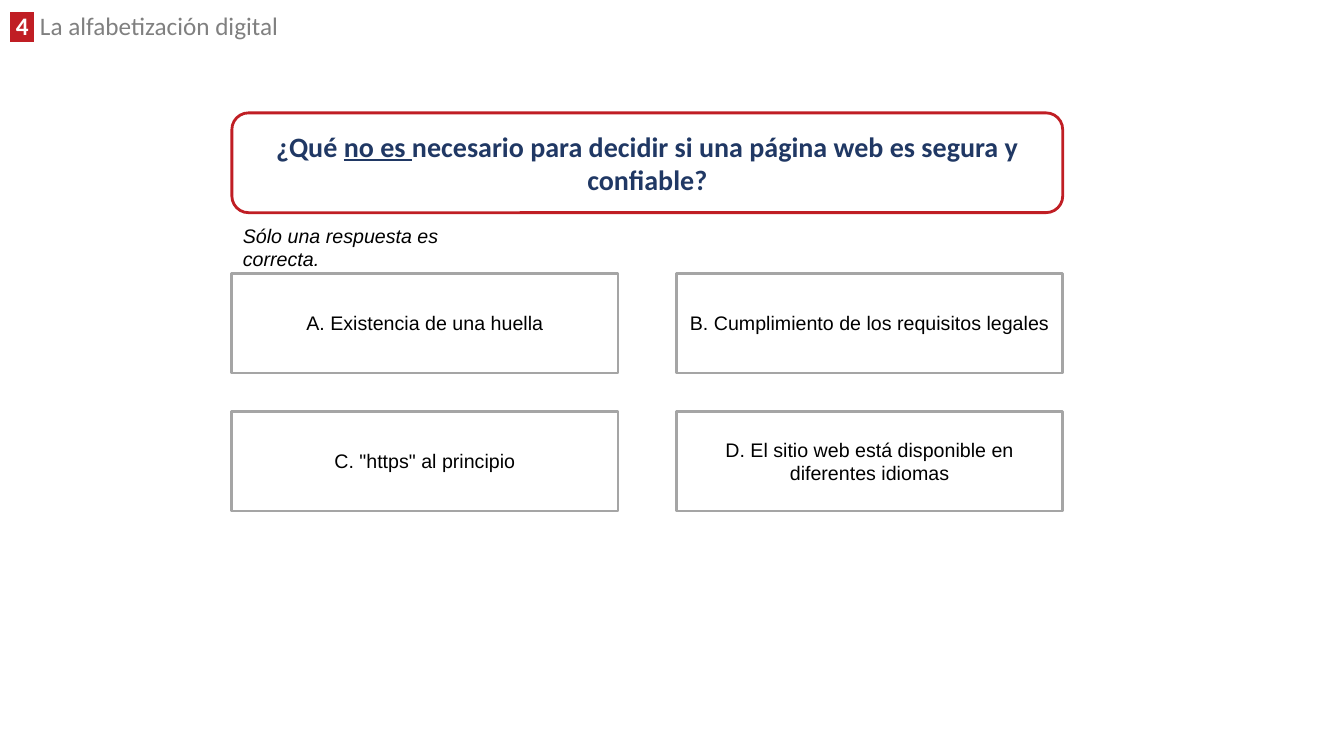
import lxml.etree
import pptx
import pptx.dml.color
import pptx.enum.shapes
import pptx.enum.text
import pptx.oxml.ns
import pptx.util

SHAPE = pptx.enum.shapes.MSO_SHAPE
ALIGN = pptx.enum.text.PP_ALIGN
ANCHOR = pptx.enum.text.MSO_ANCHOR
RED = "C01E24"


def paint(code):
    return pptx.dml.color.RGBColor.from_string(code)


def write(para, words, font="Arial", size=14, color="000000", bold=False,
          slant=False, under=False, mark=None):
    run = para.add_run()
    run.text = words
    style = run.font
    style.size = pptx.util.Pt(size)
    style.bold, style.italic, style.underline = bold, slant, under
    style.color.rgb = paint(color)
    if mark:
        light = lxml.etree.SubElement(run._r.get_or_add_rPr(), pptx.oxml.ns.qn("a:highlight"))
        lxml.etree.SubElement(light, pptx.oxml.ns.qn("a:srgbClr"), val=mark)
    style.name = font


class Quiz:
    """Draw quiz parts on one slide, placed in percent of its size."""

    def __init__(self, wide=13.33, high=7.5):
        self.deck = pptx.Presentation()
        self.deck.slide_width = pptx.util.Inches(wide)
        self.deck.slide_height = pptx.util.Inches(high)
        self.slide = self.deck.slides.add_slide(self.deck.slide_layouts[5])

    def area(self, left, top, width, height):
        wide, high = self.deck.slide_width, self.deck.slide_height
        shares = (left * wide, top * high, width * wide, height * high)
        return [round(share / 100) for share in shares]

    def frame(self, shape, anchor, align):
        body = shape.text_frame
        body.word_wrap = True
        body.auto_size = pptx.enum.text.MSO_AUTO_SIZE.NONE
        body.vertical_anchor = anchor
        para = body.paragraphs[0]
        para.alignment = align
        return para

    def title(self, spot, number, words):
        head = self.slide.shapes.title
        head.left, head.top, head.width, head.height = self.area(*spot)
        para = self.frame(head, ANCHOR.TOP, ALIGN.LEFT)
        para.line_spacing = 0.8
        para.space_before = pptx.util.Pt(0)
        write(para, f" {number} ", font="Calibri", size=18, color="FFFFFF", bold=True, mark=RED)
        write(para, " ", font="Calibri", size=18, color="7F7F7F")
        write(para, words, font="Calibri", size=18, color="808080")

    def box(self, spot, parts, kind=SHAPE.RECTANGLE, edge="A5A5A5", **form):
        shape = self.slide.shapes.add_shape(kind, *self.area(*spot))
        shape.shadow.inherit = False
        shape.fill.solid()
        shape.fill.fore_color.rgb = paint("FFFFFF")
        shape.line.color.rgb = paint(edge)
        shape.line.width = pptx.util.Pt(2)
        para = self.frame(shape, ANCHOR.MIDDLE, ALIGN.CENTER)
        for words, under in parts:
            write(para, words, under=under, **form)

    def note(self, spot, words, **form):
        shape = self.slide.shapes.add_textbox(*self.area(*spot))
        write(self.frame(shape, ANCHOR.TOP, ALIGN.LEFT), words, **form)

    def save(self):
        self.deck.save("out.pptx")


def main():
    quiz = Quiz()
    quiz.title((0, 1.47, 42.84, 4.53), 4, "La alfabetización digital")
    left, top, width, height = 17.25, 36.13, 28.73, 13.2
    across, down = 33.09, 18.27
    ask = [("¿Qué ", False), ("no es ", True),
           ("necesario para decidir si una página web es segura y confiable?", False)]
    quiz.box((left, 14.93, across + width, height), ask, kind=SHAPE.ROUNDED_RECTANGLE,
             edge=RED, font="Calibri", size=20, color="203864", bold=True)
    answers = ["A. Existencia de una huella",
               "B. Cumplimiento de los requisitos legales",
               "C. \"https\" al principio",
               "D. El sitio web está disponible en diferentes idiomas"]
    for index, answer in enumerate(answers):
        row, col = divmod(index, 2)
        spot = (left + col * across, top + row * down, width, height)
        quiz.box(spot, [(answer, False)])
    quiz.note((17.33, 28.93, 17.7, 4.53), "Sólo una respuesta es correcta.", slant=True)
    quiz.save()


if __name__ == "__main__":
    main()
